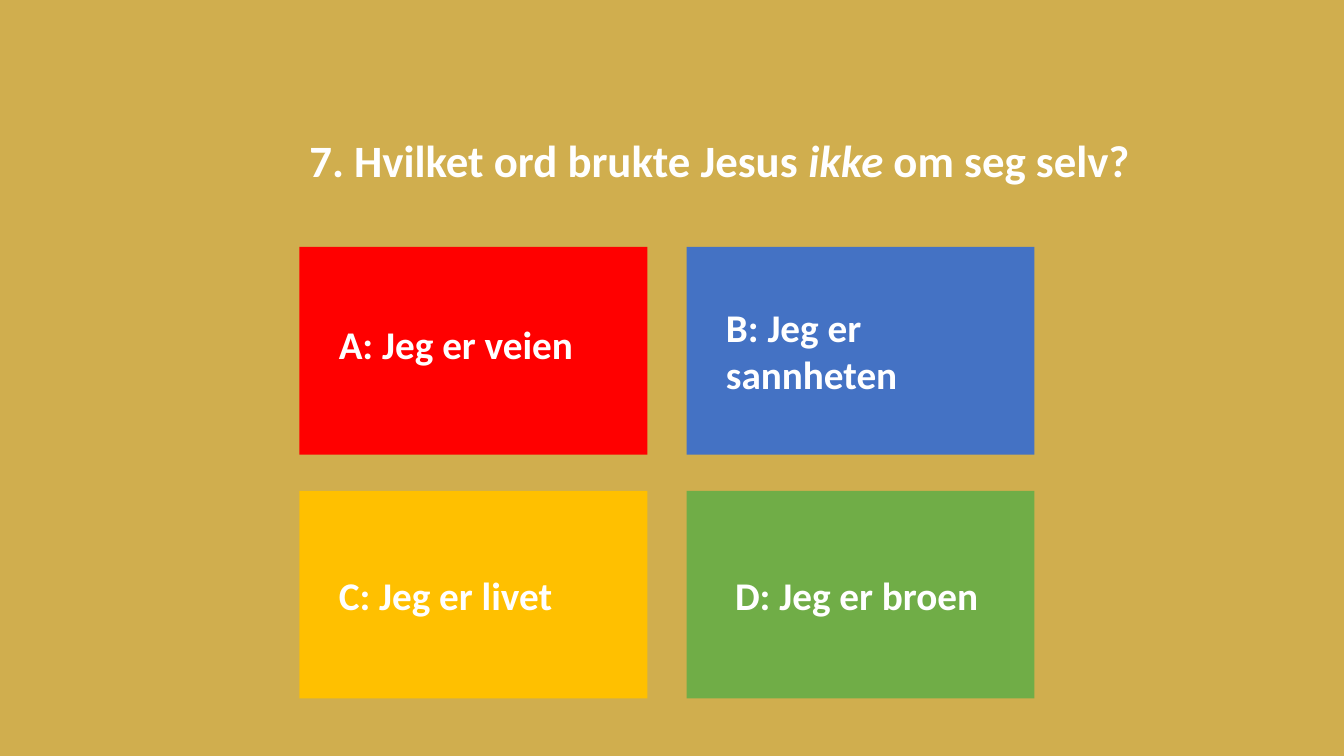
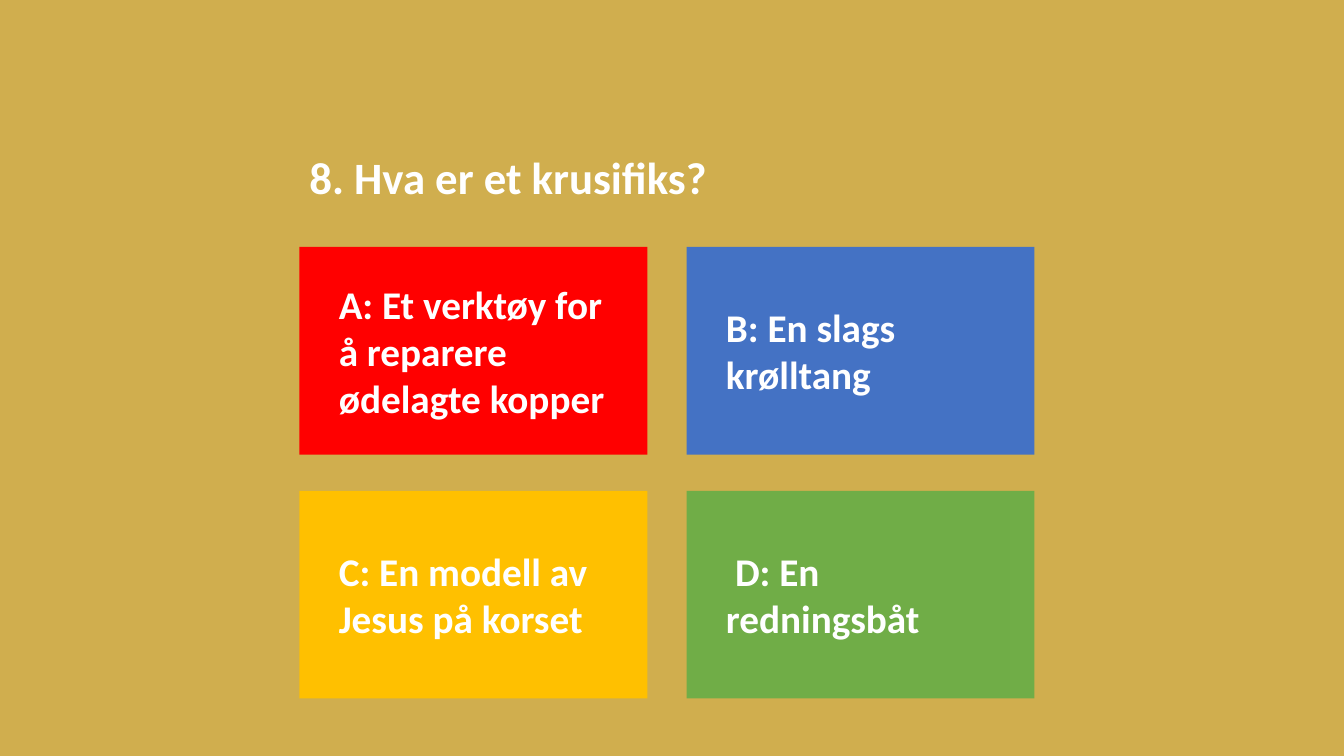
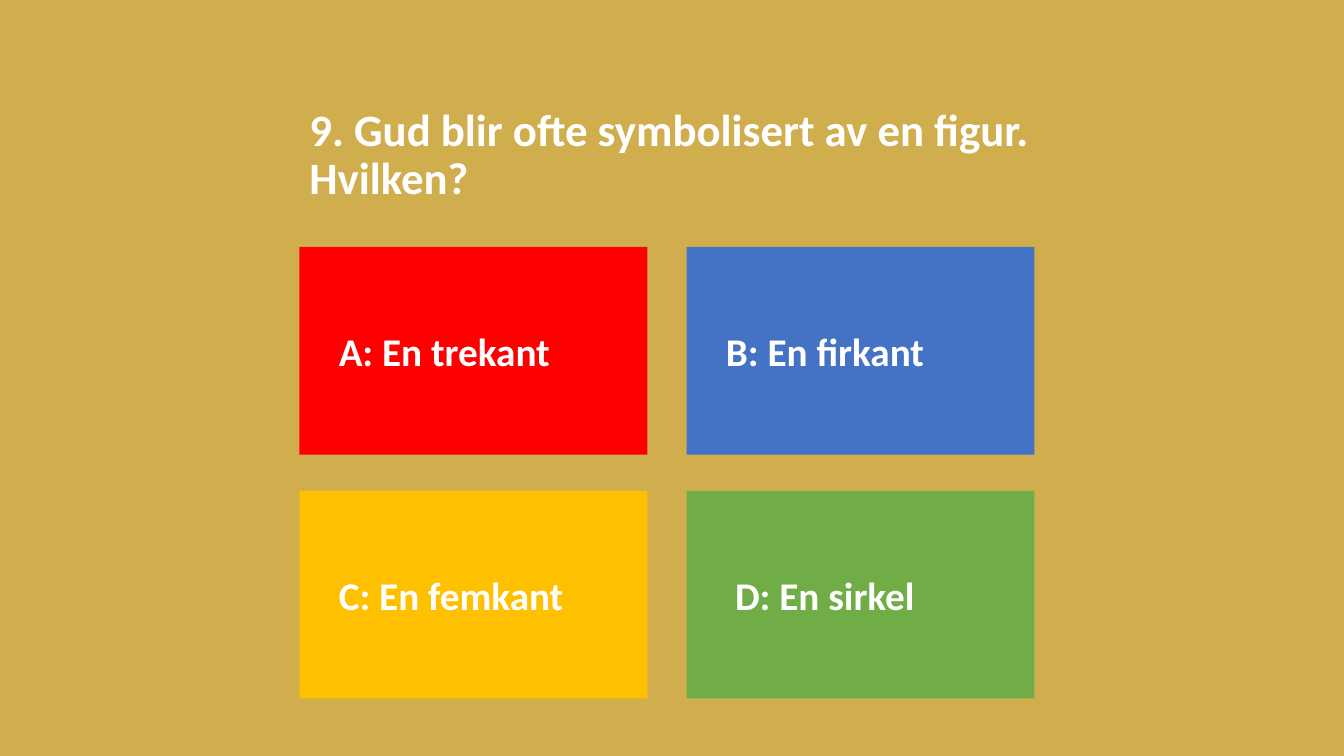
from pptx import Presentation
from pptx import util as u
from pptx.dml.color import RGBColor
from pptx.enum import shapes, text

# Each question is a list of (words, italic); lift raises a block of text, in inches.
QUIZ = [
    {"question": [("7. Hvilket ord brukte Jesus ", False), ("ikke", True),
                  (" om seg selv?", False)],
     "answers": ["A: Jeg er veien", "B: Jeg er sannheten",
                 "C: Jeg er livet", "D: Jeg er broen"],
     "question_lift": 0.17, "first_answer_lift": 0.07},
    {"question": [("8. Hva er et krusifiks?", False)],
     "answers": ["A: Et verktøy for å reparere ødelagte kopper",
                 "B: En slags krølltang",
                 "C: En modell av Jesus på korset", "D: En redningsbåt"]},
    {"question": [("9. Gud blir ofte symbolisert av en figur. Hvilken?", False)],
     "answers": ["A: En trekant", "B: En firkant",
                 "C: En femkant", "D: En sirkel"]},
]

BACKGROUND, WHITE = "D0AE4E", "FFFFFF"
ANSWER_COLOURS = ["FF0000", "4472C4", "FFC000", "70AD47"]
FIRST_LINE_INDENTS = [0, 0, 0, 0.09]
LEFT, GRID_TOP = 2.97, 2.45
CARD_W, CARD_H, GAP_X, GAP_Y = 3.45, 2.06, 0.39, 0.36
QUESTION_TOP, QUESTION_W, QUESTION_H = 0.95, 8.69, 1.13
CARD_INSETS = {"margin_left": 0.39, "margin_top": 0.2,
               "margin_right": 0.2, "margin_bottom": 0.2}


def rgb(colour):
    return RGBColor.from_string(colour)


def paint(fill, colour):
    fill.solid()
    fill.fore_color.rgb = rgb(colour)


def add_words(paragraph, words, size, italic=False):
    run = paragraph.add_run()
    run.text = words
    look = {"name": "Calibri", "size": u.Pt(size), "bold": True, "italic": italic}
    for attribute, value in look.items():
        setattr(run.font, attribute, value)
    run.font.color.rgb = rgb(WHITE)


def add_question(slide, parts, lift):
    box = slide.shapes.add_textbox(
        u.Inches(LEFT), u.Inches(QUESTION_TOP - lift),
        u.Inches(QUESTION_W), u.Inches(QUESTION_H))
    frame = box.text_frame
    frame.word_wrap = True
    frame.vertical_anchor = text.MSO_ANCHOR.BOTTOM
    paragraph = frame.paragraphs[0]
    paragraph.line_spacing = 0.9
    for words, italic in parts:
        add_words(paragraph, words, 32, italic)


def add_answer(slide, index, words, lift):
    row, column = divmod(index, 2)
    card = slide.shapes.add_shape(
        shapes.MSO_SHAPE.RECTANGLE,
        u.Inches(LEFT + column * (CARD_W + GAP_X)),
        u.Inches(GRID_TOP + row * (CARD_H + GAP_Y)),
        u.Inches(CARD_W), u.Inches(CARD_H))
    card.shadow.inherit = False
    paint(card.fill, ANSWER_COLOURS[index])
    card.line.fill.background()

    frame = card.text_frame
    frame.word_wrap = True
    frame.vertical_anchor = text.MSO_ANCHOR.MIDDLE
    for side, inset in CARD_INSETS.items():
        setattr(frame, side, u.Inches(inset))
    # Centred text moves up by half of what the bottom inset gains.
    frame.margin_bottom += u.Inches(2 * lift)
    paragraph = frame.paragraphs[0]
    paragraph.alignment = text.PP_ALIGN.LEFT
    indent = u.Inches(FIRST_LINE_INDENTS[index])
    paragraph._p.get_or_add_pPr().set("indent", str(int(indent)))
    add_words(paragraph, words, 28)


def main():
    deck = Presentation()
    deck.slide_width, deck.slide_height = u.Inches(13.33), u.Inches(7.5)
    paint(deck.slide_master.background.fill, BACKGROUND)
    for item in QUIZ:
        slide = deck.slides.add_slide(deck.slide_layouts[6])
        add_question(slide, item["question"], item.get("question_lift", 0))
        for index, words in enumerate(item["answers"]):
            lift = item.get("first_answer_lift", 0) if index == 0 else 0
            add_answer(slide, index, words, lift)
    deck.save("out.pptx")


if __name__ == "__main__":
    main()
